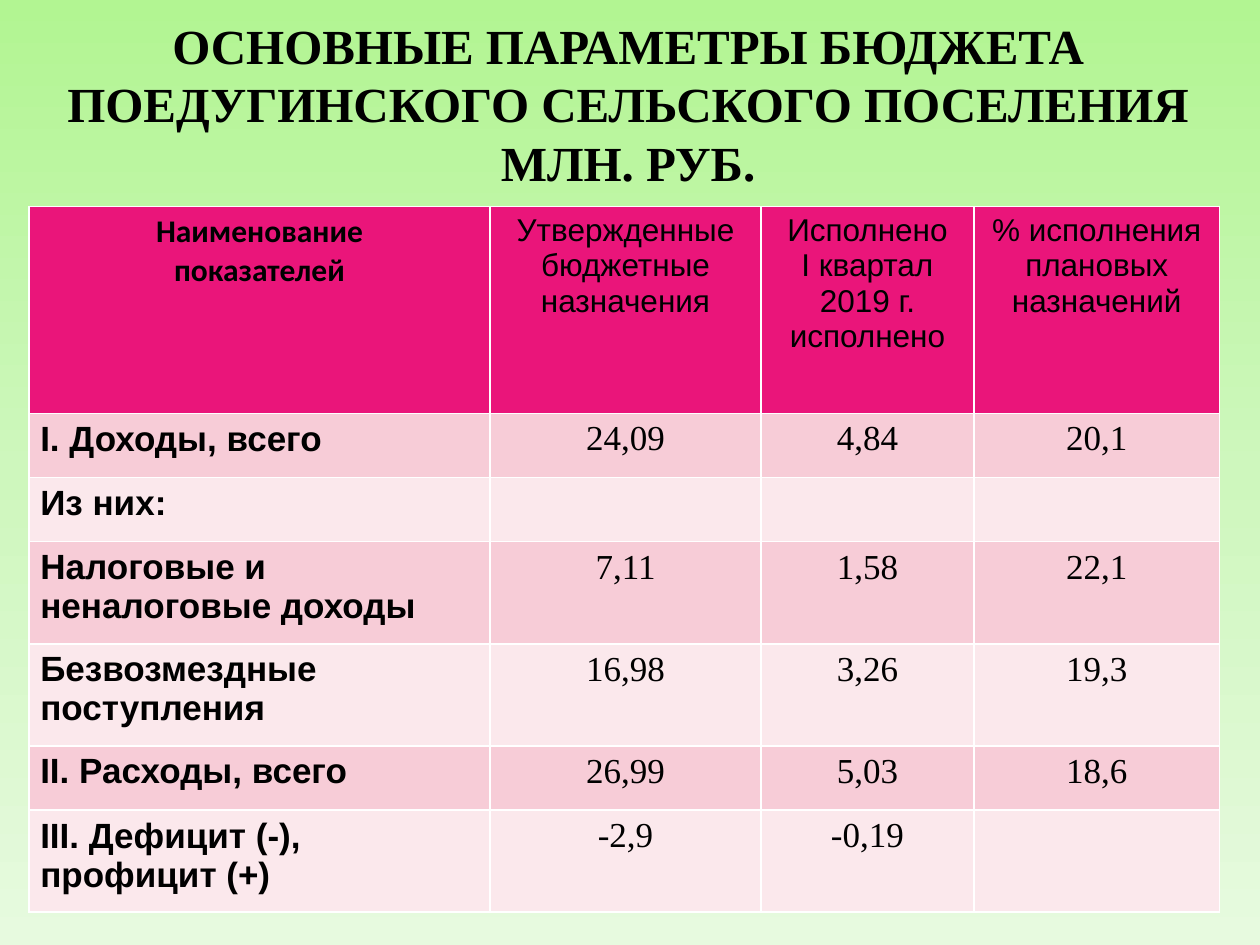
from copy import deepcopy

from pptx import Presentation
from pptx import util as u
from pptx.dml.color import RGBColor
from pptx.enum import text
from pptx.oxml import parse_xml
from pptx.oxml.ns import nsdecls, qn

# Content
TITLE = "ОСНОВНЫЕ ПАРАМЕТРЫ БЮДЖЕТА ПОЕДУГИНСКОГО СЕЛЬСКОГО ПОСЕЛЕНИЯ МЛН. РУБ."
HEADINGS = [
    "Наименование\nпоказателей",
    "Утвержденные бюджетные назначения",
    "Исполнено\nI квартал 2019 г. исполнено",
    "% исполнения\nплановых назначений",
]
BUDGET = [
    ("I. Доходы, всего", "24,09", "4,84", "20,1"),
    ("Из них:", "", "", ""),
    ("Налоговые и неналоговые доходы", "7,11", "1,58", "22,1"),
    ("Безвозмездные поступления", "16,98", "3,26", "19,3"),
    ("II. Расходы, всего", "26,99", "5,03", "18,6"),
    ("III. Дефицит (-), профицит (+)", "-2,9", "-0,19", ""),
]

# Style and grid, in inches
COLORS = {"text": "000000", "heading": "EA157A", "odd": "F7CCD7",
          "even": "FBE8EC", "border": "FFFFFF"}
GRADIENT = [(0, "B2F592"), (0.5, "CEF7BD"), (1, "E7FADF")]
LEFT, TABLE_TOP = 0.23, 1.64
COLUMNS = [3.66, 2.15, 1.69, 1.95]
HEADING_ROW, SINGLE_ROW, DOUBLE_ROW = 1.64, 0.51, 0.81
WRAP_AT = 20  # labels longer than this take two lines
CENTER, START = text.PP_ALIGN.CENTER, text.PP_ALIGN.LEFT


def style(paragraph, font, size, bold, align):
    paragraph.alignment = align
    paragraph.font.name = font
    paragraph.font.size = u.Pt(size)
    paragraph.font.bold = bold
    paragraph.font.color.rgb = RGBColor.from_string(COLORS["text"])


def add_borders(cell):
    properties = cell._tc.get_or_add_tcPr()
    for index, side in enumerate(("lnL", "lnR", "lnT", "lnB")):
        properties.insert(index, parse_xml(
            f'<a:{side} {nsdecls("a")} w="12700"><a:solidFill>'
            f'<a:srgbClr val="{COLORS["border"]}"/></a:solidFill></a:{side}>'))


def cell_style(row, column):
    if row == 0:
        return ("Calibri", 18, True, CENTER) if column == 0 else ("Arial", 18, False, CENTER)
    if column == 0:
        return "Arial", 20, True, START
    return "Times New Roman", 20, False, CENTER


presentation = Presentation()
presentation.slide_width, presentation.slide_height = u.Inches(10), u.Inches(7.5)
slide = presentation.slides.add_slide(presentation.slide_layouts[6])

# Background: three-stop vertical gradient
backdrop = slide.background.fill
backdrop.gradient()
backdrop.gradient_angle = 270
stop_list = next(slide._element.iter(qn("a:gsLst")))
stop_list.append(deepcopy(stop_list[-1]))
for stop, (position, color) in zip(backdrop.gradient_stops, GRADIENT):
    stop.position = position
    stop.color.rgb = RGBColor.from_string(color)

# Title
title = slide.shapes.add_textbox(*map(u.Inches, (LEFT, 0.31, 9.51, 1.02))).text_frame
title.word_wrap = True
title.vertical_anchor = text.MSO_ANCHOR.MIDDLE
title.text = TITLE
style(title.paragraphs[0], "Times New Roman", 28, True, CENTER)

# Budget table
heights = [HEADING_ROW] + [DOUBLE_ROW if len(label) > WRAP_AT else SINGLE_ROW
                           for label, *_ in BUDGET]
rows = [HEADINGS, *BUDGET]
table = slide.shapes.add_table(
    len(rows), len(COLUMNS),
    *map(u.Inches, (LEFT, TABLE_TOP, sum(COLUMNS), sum(heights)))).table
table.first_row = table.horz_banding = False
for column, width in zip(table.columns, COLUMNS):
    column.width = u.Inches(width)
for r, (values, height) in enumerate(zip(rows, heights)):
    table.rows[r].height = u.Inches(height)
    band = "heading" if r == 0 else "odd" if r % 2 else "even"
    for c, value in enumerate(values):
        cell = table.cell(r, c)
        cell.text = value
        cell.margin_left = cell.margin_right = u.Inches(0.09)
        cell.fill.solid()
        cell.fill.fore_color.rgb = RGBColor.from_string(COLORS[band])
        add_borders(cell)
        for paragraph in cell.text_frame.paragraphs:
            style(paragraph, *cell_style(r, c))

presentation.save("out.pptx")
